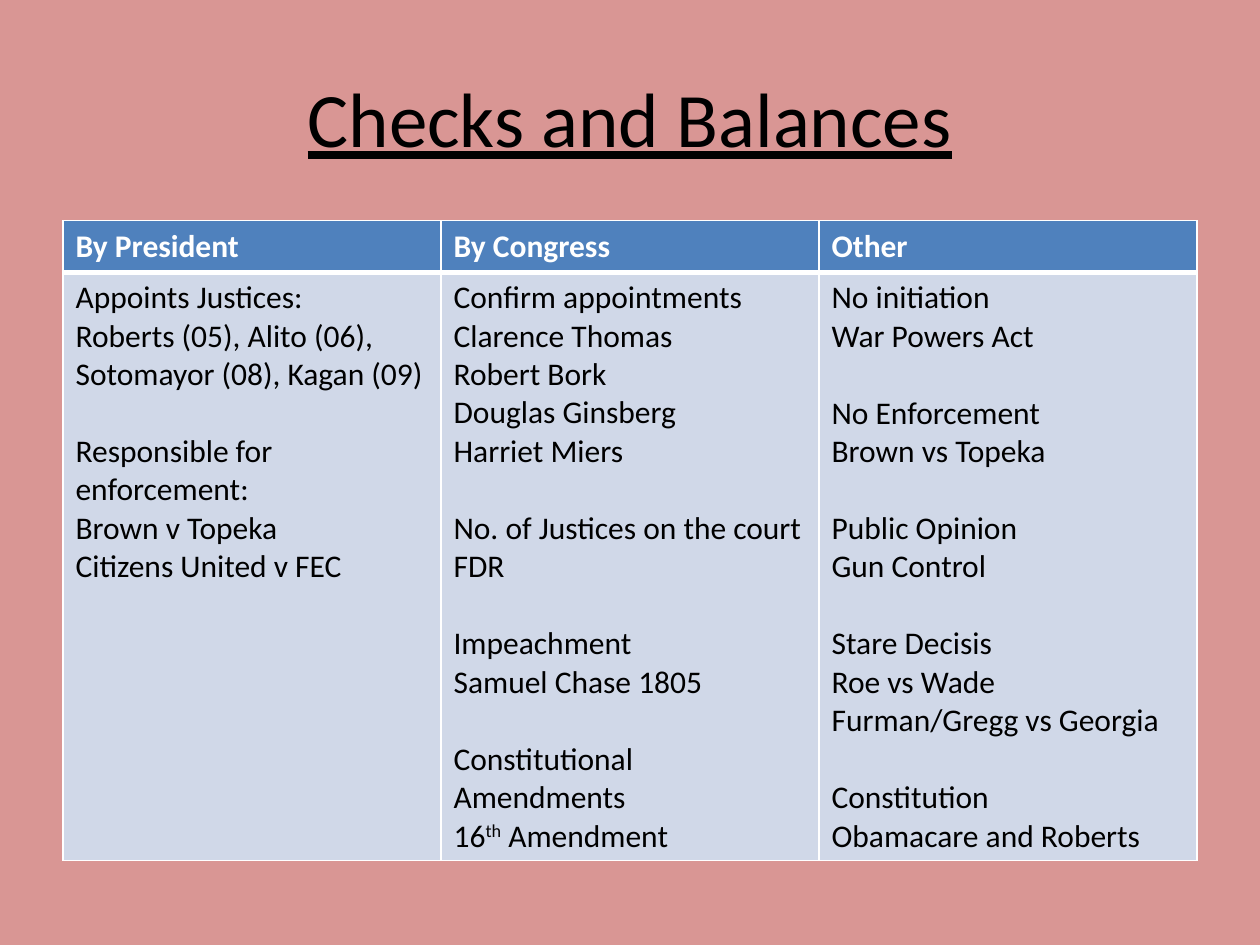
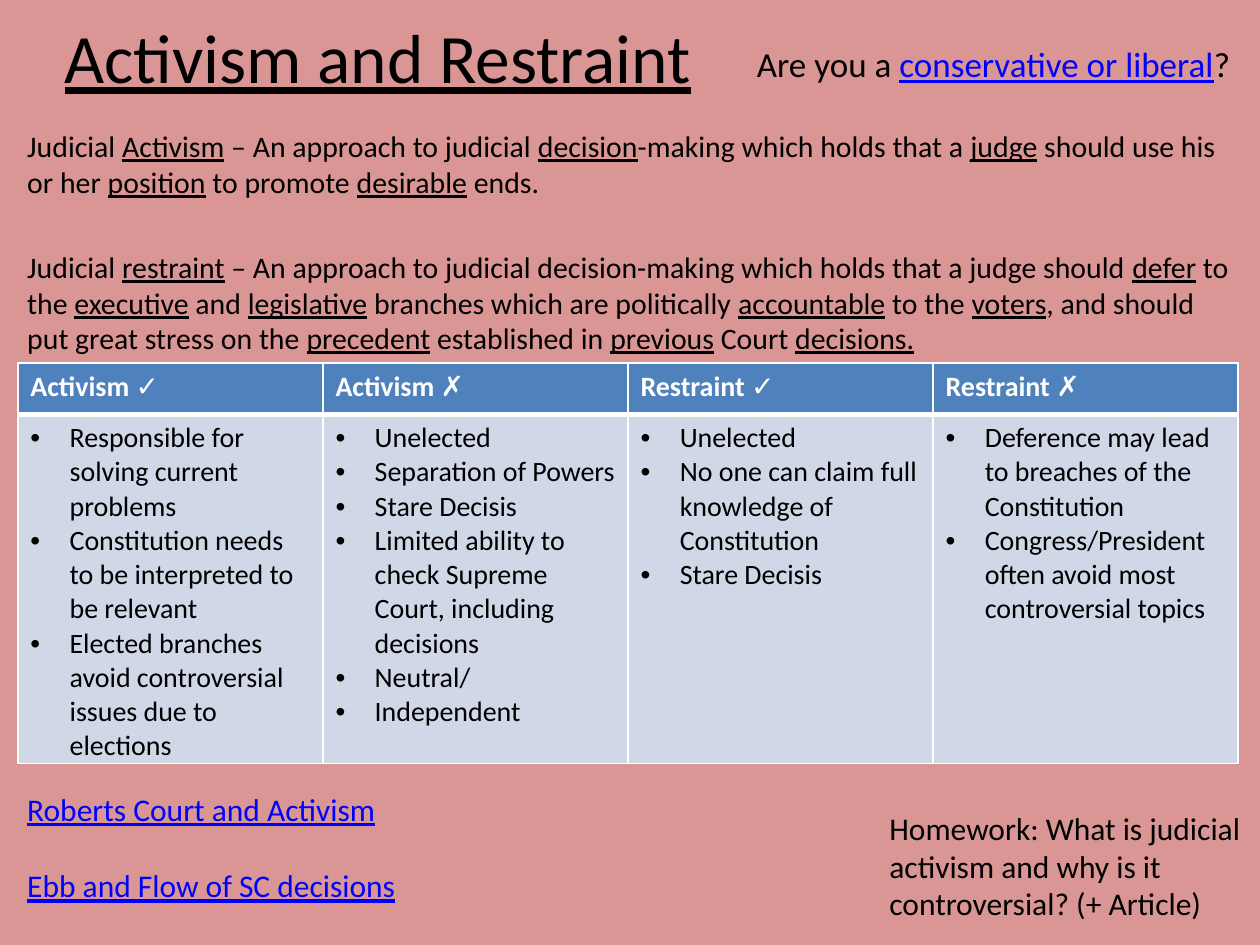
from lxml.etree import SubElement
from pptx import Presentation
from pptx.dml.color import RGBColor
from pptx.enum.text import MSO_ANCHOR, PP_ALIGN
from pptx.oxml import parse_xml
from pptx.oxml.ns import nsdecls, qn
from pptx.util import Cm, Pt

COLORS = {
    "background": "D99694",
    "text": "000000",
    "link": "0000FF",
    "header": "4F81BD",
    "body": "D0D8E8",
    "white": "FFFFFF",
}
FONT = "Calibri"
UNDERLINED = {"underline": True}
LINK = {"underline": True, "color": "link"}
RAISED = {"raised": True}

CHECKS = {
    "By President": [
        ["Appoints Justices:", "Roberts (05), Alito (06), Sotomayor (08), Kagan (09)"],
        ["Responsible for enforcement:", "Brown v Topeka", "Citizens United v FEC"],
    ],
    "By Congress": [
        ["Confirm appointments", "Clarence Thomas", "Robert Bork",
         "Douglas Ginsberg", "Harriet Miers"],
        ["No. of Justices on the court", "FDR"],
        ["Impeachment", "Samuel Chase 1805"],
        ["Constitutional Amendments", "16_th_ Amendment"],
    ],
    "Other": [
        ["No initiation", "War Powers Act"],
        ["No Enforcement", "Brown vs Topeka"],
        ["Public Opinion", "Gun Control"],
        ["Stare Decisis", "Roe vs Wade", "Furman/Gregg vs Georgia"],
        ["Constitution", "Obamacare and Roberts"],
    ],
}
ARGUMENTS = {
    "Activism ✓": [[
        "Responsible for solving current problems",
        "Constitution needs to be interpreted to be relevant",
        "Elected branches avoid controversial issues due to elections",
    ]],
    "Activism ✗": [[
        "Unelected", "Separation of Powers", "Stare Decisis",
        "Limited ability to check Supreme Court, including decisions",
        "Neutral/", "Independent",
    ]],
    "Restraint ✓": [[
        "Unelected", "No one can claim full knowledge of Constitution", "Stare Decisis",
    ]],
    "Restraint ✗": [[
        "Deference may lead to breaches of the Constitution",
        "Congress/President often avoid most controversial topics",
    ]],
}
DEFINITIONS = [
    ["Judicial _Activism_ – An approach to judicial _decision_-making which holds that "
     "a _judge_ should use his or her _position_ to promote _desirable_ ends."],
    ["Judicial _restraint_ – An approach to judicial decision-making which holds that "
     "a judge should _defer_ to the _executive_ and _legislative_ branches which are "
     "politically _accountable_ to the _voters_, and should put great stress on the "
     "_precedent_ established in _previous_ Court _decisions._"],
]


def rgb(name):
    return RGBColor.from_string(COLORS[name])


def add_span(para, text, size, color="text", bold=False, underline=False, raised=False):
    span = para.add_run()
    span.text = text
    font = span.font
    font.name, font.size = FONT, Pt(size)
    font.bold, font.underline = bold, underline
    font.color.rgb = rgb(color)
    if raised:
        span._r.get_or_add_rPr().set("baseline", "30000")


def add_bullet(para):
    properties = para._p.get_or_add_pPr()
    properties.set("marL", str(Cm(0.79)))
    properties.set("indent", str(-Cm(0.79)))
    SubElement(properties, qn("a:buFont")).set("typeface", "Arial")
    SubElement(properties, qn("a:buChar")).set("char", "•")


def write(frame, groups, size, gap=22, align=PP_ALIGN.LEFT, bullets=False,
          accent=UNDERLINED, **style):
    """Fill a frame with groups of paragraphs; _marked_ words take the accent format."""
    frame.word_wrap = True
    para = None
    for group in groups:
        for position, line in enumerate(group):
            first = para is None
            para = frame.paragraphs[0] if first else frame.add_paragraph()
            if bullets:
                add_bullet(para)
            para.alignment = align
            if position == 0 and not first:
                para.space_before = Pt(gap)
            for index, part in enumerate(line.split("_")):
                if part:
                    add_span(para, part, size, **(style | accent if index % 2 else style))


def add_text(page, groups, left, top, width, height, size, anchor=MSO_ANCHOR.TOP, **style):
    box = page.shapes.add_textbox(Cm(left), Cm(top), Cm(width), Cm(height))
    box.text_frame.vertical_anchor = anchor
    write(box.text_frame, groups, size, **style)


def add_title(page, text, left, top, width, height, size):
    add_text(page, [[text]], left, top, width, height, size,
             anchor=MSO_ANCHOR.MIDDLE, align=PP_ALIGN.CENTER, underline=True)


def set_borders(cell, **widths):
    """Draw white cell edges; widths are points by side: L, R, T, B."""
    properties = cell._tc.get_or_add_tcPr()
    for index, (side, width) in enumerate(widths.items()):
        properties.insert(index, parse_xml(
            f'<a:ln{side} {nsdecls("a")} w="{Pt(width)}"><a:solidFill>'
            f'<a:srgbClr val="{COLORS["white"]}"/></a:solidFill></a:ln{side}>'))


def fill_cell(cell, fill, bottom, top, groups, size, **style):
    cell.fill.solid()
    cell.fill.fore_color.rgb = rgb(fill)
    set_borders(cell, L=1, R=1, T=top, B=bottom)
    write(cell.text_frame, groups, size, **style)


def add_columns(page, columns, left, top, column_width, body_height, size, **style):
    """Add a table with one header and one body cell for each column."""
    header_height = 1.04
    table = page.shapes.add_table(
        2, len(columns), Cm(left), Cm(top),
        Cm(column_width * len(columns)), Cm(header_height + body_height)).table
    table.rows[0].height, table.rows[1].height = Cm(header_height), Cm(body_height)
    for index, (heading, groups) in enumerate(columns.items()):
        table.columns[index].width = Cm(column_width)
        fill_cell(table.cell(0, index), "header", 3, 1, [[heading]], size,
                  color="white", bold=True)
        fill_cell(table.cell(1, index), "body", 1, 3, groups, size, **style)


def add_page(deck):
    page = deck.slides.add_slide(deck.slide_layouts[6])
    page.background.fill.solid()
    page.background.fill.fore_color.rgb = rgb("background")
    return page


def add_checks_page(deck):
    page = add_page(deck)
    add_title(page, "Checks and Balances", 1.27, 0.76, 22.86, 3.18, 44)
    add_columns(page, CHECKS, 1.27, 4.45, 7.62, 11.86, 18, accent=RAISED)


def add_activism_page(deck):
    page = add_page(deck)
    add_title(page, "Activism and Restraint", 0.3, 0.33, 14.63, 1.6, 39.6)
    add_text(page, DEFINITIONS, 0.3, 2.46, 24.8, 4.67, 17, gap=28)
    add_text(page, [["Are you a _conservative or liberal_?"]],
             15.01, 0.74, 10.39, 1.12, 20, accent=LINK)
    add_text(page, [["Roberts Court and Activism"], ["Ebb and Flow of SC decisions"]],
             0.3, 15.8, 12.37, 2.57, 18, **LINK)
    add_columns(page, ARGUMENTS, 0.36, 7.32, 6.15, 7.03, 16, bullets=True)
    add_text(page, [["Homework: What is judicial activism and why is it "
                     "controversial? (+ Article)"]], 17.68, 16.18, 7.62, 2.57, 18)


def main():
    deck = Presentation()
    deck.slide_width, deck.slide_height = Cm(25.4), Cm(19.05)
    add_checks_page(deck)
    add_activism_page(deck)
    deck.save("out.pptx")


if __name__ == "__main__":
    main()
